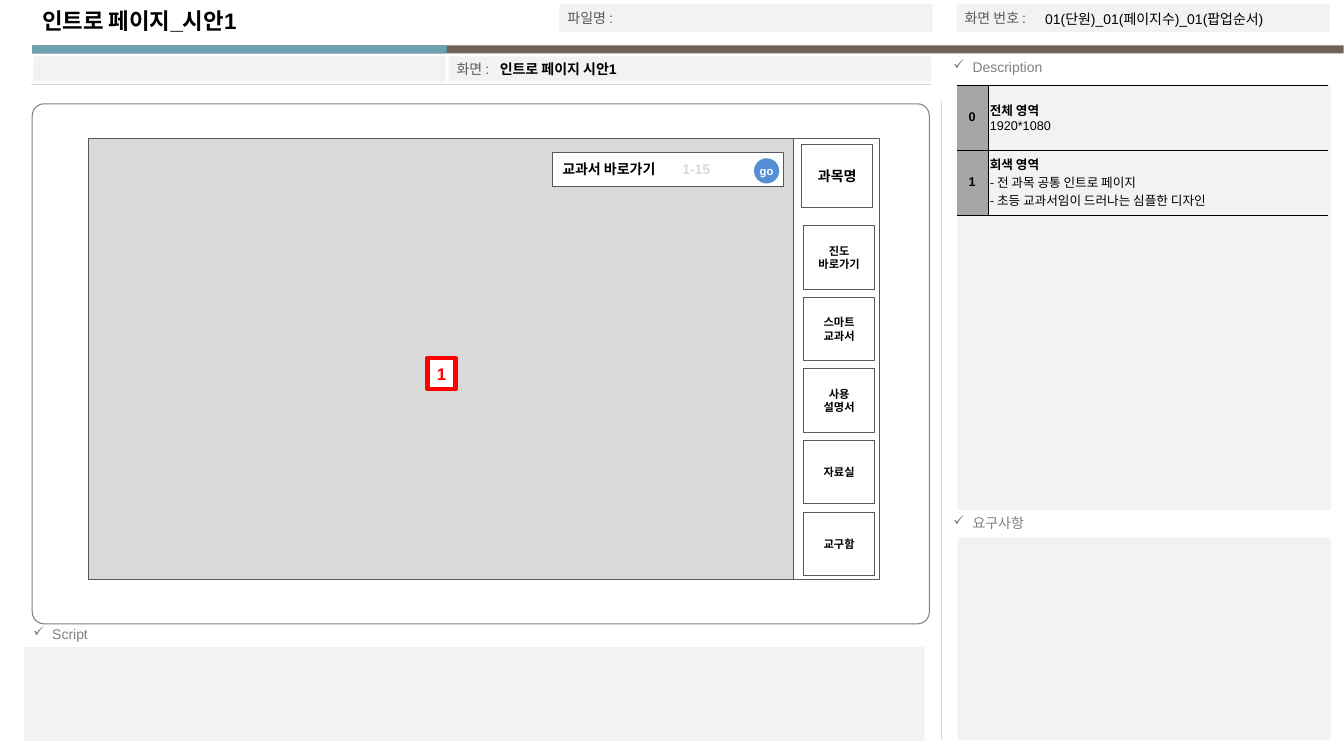
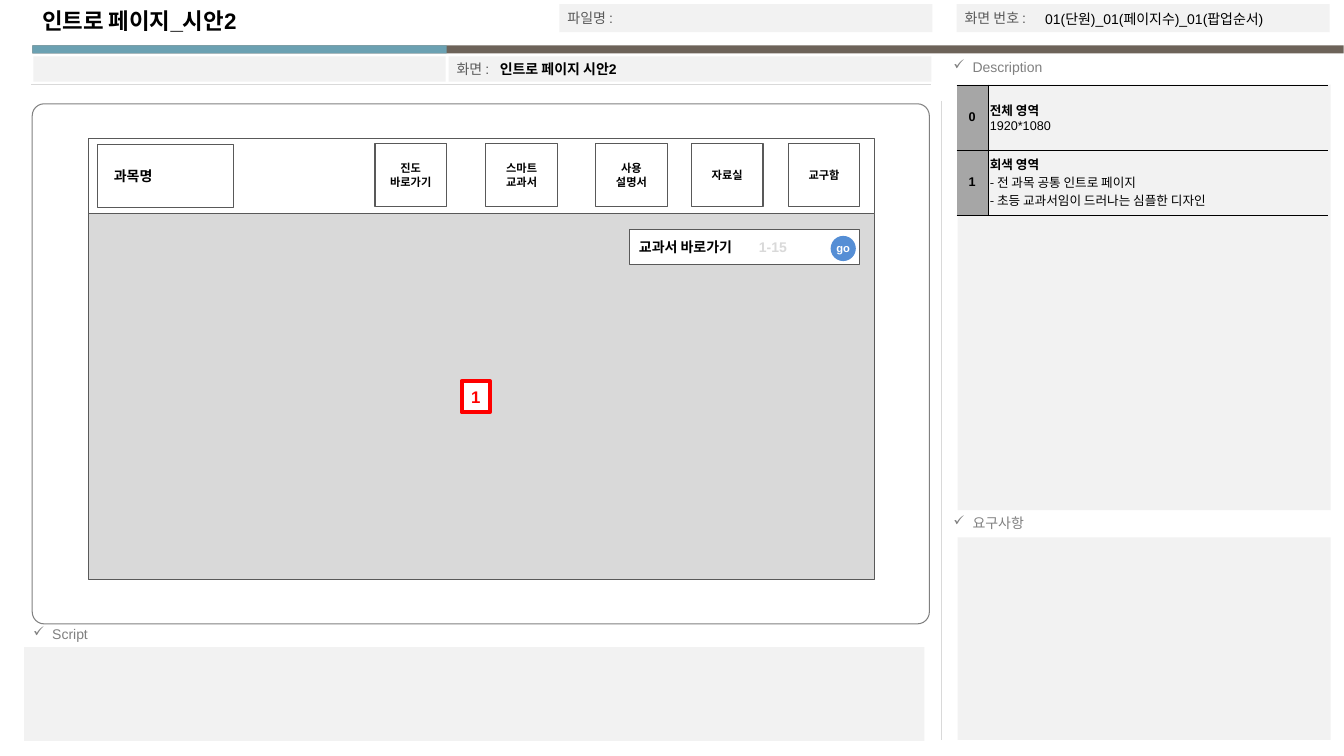
from lxml import etree
from pptx import Presentation
from pptx import util as u
from pptx.dml.color import RGBColor
from pptx.enum import shapes, text
from pptx.oxml.ns import qn

BLACK = RGBColor(0x00, 0x00, 0x00)
WHITE = RGBColor(0xFF, 0xFF, 0xFF)
RED = RGBColor(0xFF, 0x00, 0x00)
BLUE = RGBColor(0x55, 0x8E, 0xD5)
TEAL = RGBColor(0x6B, 0xA1, 0xB2)
BROWN = RGBColor(0x6D, 0x63, 0x59)
PANEL = RGBColor(0xF2, 0xF2, 0xF2)
SILVER = RGBColor(0xD9, 0xD9, 0xD9)
INDEX = RGBColor(0xA6, 0xA6, 0xA6)
MUTED = RGBColor(0x80, 0x80, 0x80)
OUTLINE = RGBColor(0x59, 0x59, 0x59)

RECT = shapes.MSO_SHAPE.RECTANGLE
LEFT, CENTER = text.PP_ALIGN.LEFT, text.PP_ALIGN.CENTER
TOP, MIDDLE = text.MSO_ANCHOR.TOP, text.MSO_ANCHOR.MIDDLE

LATIN = "Arial"
KOREAN = "Noto Sans CJK KR"
GRID = u.Inches(0.1)
BUTTON_W, BUTTON_H = 7.1, 6.3
STAGE_X, STAGE_Y, STAGE_H = 8.8, 13.7, 43.8

SCREEN_NUMBER = "01(단원)_01(페이지수)_01(팝업순서)"
MENU = [("진도", "바로가기"), ("스마트", "교과서"), ("사용", "설명서"), ("자료실",), ("교구함",)]
NOTES = [
    ("0", [("전체 영역", True, LATIN), ("1920*1080", False, LATIN)]),
    ("1", [("회색 영역", True, LATIN),
           ("- 전 과목 공통 인트로 페이지", False, KOREAN),
           ("- 초등 교과서임이 드러나는 심플한 디자인", False, KOREAN)]),
]


def grid(*cells):
    return [round(cell * GRID) for cell in cells]


class Storyboard:
    def __init__(self):
        self.deck = Presentation()
        self.deck.slide_width, self.deck.slide_height = grid(133.33, 75)
        self.slide = None

    def add_lines(self, frame, lines, size=10, color=BLACK, bold=False, align=LEFT, bullet=None):
        for number, line in enumerate(lines):
            words, heavy, font = (line, bold, LATIN) if isinstance(line, str) else line
            paragraph = frame.paragraphs[0] if number == 0 else frame.add_paragraph()
            paragraph.alignment = align
            if bullet:
                props = paragraph._p.get_or_add_pPr()
                hang = round(1.9 * GRID)
                props.set("marL", str(hang))
                props.set("indent", str(-hang))
                etree.SubElement(props, qn("a:buChar")).set("char", bullet)
            run = paragraph.add_run()
            run.text = words
            run.font.name = font
            run.font.size = u.Pt(size)
            run.font.bold = heavy
            run.font.color.rgb = color

    def box(self, x, y, w, h, fill, line=None, weight=0.75, kind=RECT, lines=(), inset=0, **style):
        shape = self.slide.shapes.add_shape(kind, *grid(x, y, w, h))
        shape.shadow.inherit = False
        shape.fill.solid()
        shape.fill.fore_color.rgb = fill
        if line is None:
            shape.line.fill.background()
        else:
            shape.line.color.rgb = line
            shape.line.width = u.Pt(weight)
        frame = shape.text_frame
        frame.margin_left, frame.margin_right = grid(inset, 0)
        frame.margin_top = frame.margin_bottom = 0
        frame.vertical_anchor = MIDDLE
        self.add_lines(frame, lines, **style)
        return shape

    def label(self, x, y, w, h, words, anchor=MIDDLE, **style):
        frame = self.slide.shapes.add_textbox(*grid(x, y, w, h)).text_frame
        frame.word_wrap = True
        frame.vertical_anchor = anchor
        self.add_lines(frame, [words], **style)

    def rule(self, x1, y1, x2, y2):
        line = self.slide.shapes.add_connector(shapes.MSO_CONNECTOR.STRAIGHT, *grid(x1, y1, x2, y2))
        line.line.color.rgb = SILVER
        line.line.width = u.Pt(0.75)
        etree.SubElement(line._element.spPr, qn("a:effectLst"))

    def heading(self, x, y, w, h, words):
        self.label(x, y, w, h, words, anchor=TOP, color=MUTED, bullet="✓")

    def field(self, x, y, w, h, words, inset=0.8):
        self.box(x, y, w, h, PANEL, lines=[words], inset=inset, color=OUTLINE)

    def button(self, x, y, lines, w=BUTTON_W, size=8, align=CENTER, inset=0):
        self.box(x, y, w, BUTTON_H, WHITE, OUTLINE, lines=lines, inset=inset,
                 size=size, bold=True, align=align)

    def marker(self, x, y, number):
        self.box(x, y, 2.8, 3.1, WHITE, RED, 3, lines=[number],
                 size=12, color=RED, bold=True, align=CENTER)

    def search(self, x, y):
        self.box(x, y, 22.9, 3.4, WHITE, OUTLINE, lines=["교과서 바로가기"], inset=1, bold=True)
        self.label(x + 11.9, y + 0.7, 8.1, 1.9, "1-15", color=SILVER, bold=True)
        self.box(x + 20, y + 0.6, 2.5, 2.5, BLUE, kind=shapes.MSO_SHAPE.OVAL,
                 lines=["go"], size=8, color=WHITE, bold=True, align=CENTER)

    def border(self, cell, sides):
        props = cell._tc.get_or_add_tcPr()
        for side in "LRTB":
            edge = etree.SubElement(props, qn(f"a:ln{side}"))
            if side in sides:
                edge.set("w", str(u.Pt(0.25)))
                paint = etree.SubElement(edge, qn("a:solidFill"))
                etree.SubElement(paint, qn("a:srgbClr")).set("val", str(BLACK))
            else:
                etree.SubElement(edge, qn("a:noFill"))

    def description(self, x, y, widths, row_height):
        size = grid(x, y, sum(widths), row_height * len(NOTES))
        table = self.slide.shapes.add_table(len(NOTES), len(widths), *size).table
        table.first_row = table.horz_banding = False
        for column, width in zip(table.columns, grid(*widths)):
            column.width = width
        for row, (number, details) in enumerate(NOTES):
            table.rows[row].height = grid(row_height)[0]
            index, detail = table.cell(row, 0), table.cell(row, 1)
            for cell, sides in ((index, "RTB"), (detail, "LTB")):
                cell.margin_left = cell.margin_right = grid(0.2)[0]
                cell.margin_top = cell.margin_bottom = grid(0.2)[0]
                cell.vertical_anchor = MIDDLE
                self.border(cell, sides)
            index.fill.solid()
            index.fill.fore_color.rgb = INDEX
            detail.fill.background()
            self.add_lines(index.text_frame, [number], size=9, bold=True, align=CENTER)
            self.add_lines(detail.text_frame, details, size=9)

    def page(self, version):
        self.slide = self.deck.slides.add_slide(self.deck.slide_layouts[6])
        self.box(3.2, 4.5, 130.1, 0.8, BROWN)
        self.box(3.2, 4.5, 41.1, 0.8, TEAL)
        self.rule(93.4, 10, 93.4, 73.4)
        self.heading(93.6, 5.3, 39.7, 2.7, "Description")
        self.box(95, 8.4, 37, 42.2, PANEL)
        self.heading(93.6, 50.6, 39.7, 2.7, "요구사항")
        self.box(95, 53.3, 37, 20.1, PANEL)
        self.heading(2.3, 61.6, 39.4, 3.1, "Script")
        self.box(2.4, 64.2, 89.3, 9.3, PANEL)
        self.box(3.3, 5.6, 40.9, 2.5, PANEL)
        self.field(44.5, 5.6, 47.9, 2.5, "화면 :")
        self.field(55.5, 0.4, 37, 2.8, "파일명 :")
        self.field(94.9, 0.4, 37, 2.8, "화면 번호 :")
        self.rule(3.1, 8.4, 92.4, 8.4)
        frame = self.box(3.2, 10.3, 89, 51.6, WHITE, MUTED, kind=shapes.MSO_SHAPE.ROUNDED_RECTANGLE)
        frame.adjustments[0] = 0.023
        self.label(3.2, 0.2, 52, 3.7, f"인트로 페이지_시안{version}", anchor=TOP, size=16, bold=True)
        self.label(48.6, 5.6, 43.8, 2.5, f"인트로 페이지 시안{version}", bold=True)
        self.label(102.7, 0.6, 29, 2.5, SCREEN_NUMBER)
        self.description(94.9, 8.4, (3.1, 33.7), 6.45)


def side_menu(board):
    board.page(1)
    board.box(STAGE_X, STAGE_Y, 78.5, STAGE_H, WHITE, OUTLINE)
    board.box(STAGE_X, STAGE_Y, 69.9, STAGE_H, SILVER, OUTLINE)
    board.button(79.5, 14.3, ["과목명"], size=10)
    for place, lines in enumerate(MENU):
        board.button(79.7, 22.4 + BUTTON_W * place, lines)
    board.marker(42.4, 35.5, "1")
    board.search(54.8, 15.1)


def top_menu(board):
    board.page(2)
    board.box(STAGE_X, STAGE_Y, 78, STAGE_H, SILVER, OUTLINE)
    board.box(STAGE_X, STAGE_Y, 78, 7.5, WHITE, OUTLINE)
    board.button(9.7, 14.3, ["과목명"], w=13.5, size=10, align=LEFT, inset=1.6)
    for x, lines in zip((37.2, 48.2, 59.1, 68.6, 78.2), MENU):
        board.button(x, 14.2, lines)
    board.marker(45.8, 37.8, "1")
    board.search(62.4, 22.8)


def main():
    board = Storyboard()
    side_menu(board)
    top_menu(board)
    board.deck.save("out.pptx")


if __name__ == "__main__":
    main()
